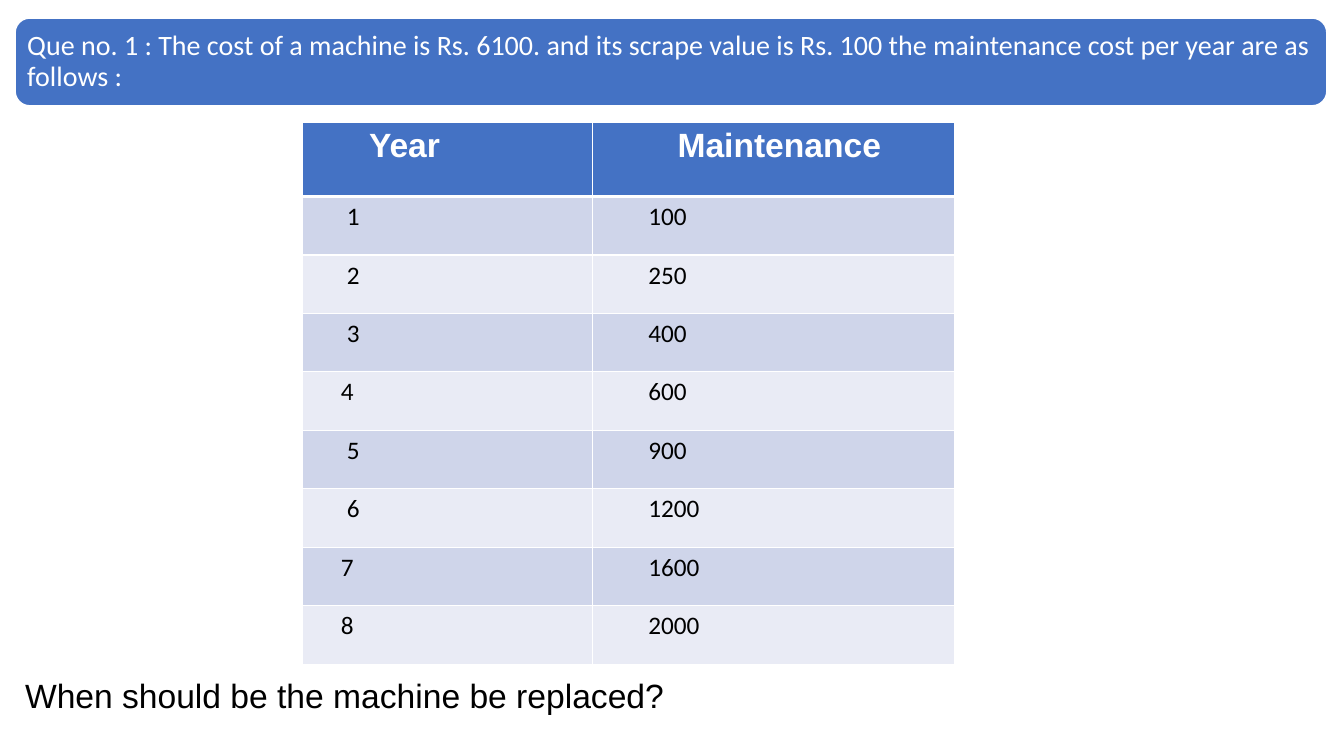
from dataclasses import dataclass

from pptx import Presentation
from pptx.dml.color import RGBColor
from pptx.enum.shapes import MSO_SHAPE
from pptx.enum.text import MSO_ANCHOR, MSO_AUTO_SIZE, PP_ALIGN
from pptx.oxml import parse_xml
from pptx.oxml.ns import nsdecls
from pptx.util import Inches, Pt


@dataclass(frozen=True)
class Theme:
    accent: str = "4472C4"
    dark_band: str = "CFD5EA"
    light_band: str = "E9EBF5"
    white: str = "FFFFFF"
    black: str = "000000"
    heading_font: str = "Arial"
    body_font: str = "Calibri"
    heading_size: int = 24
    banner_size: int = 20
    cell_size: int = 18


THEME = Theme()
MAINTENANCE_COSTS = [100, 250, 400, 600, 900, 1200, 1600, 2000]
OUTDENTED_YEARS = {4, 7, 8}


def color(value):
    return RGBColor.from_string(value)


def add_run(paragraph, text, font_name, size, font_color, bold=False):
    run = paragraph.add_run()
    run.text = text
    run.font.name = font_name
    run.font.size = Pt(size)
    run.font.bold = bold
    run.font.color.rgb = color(font_color)


def add_banner(slide, left, top, width, height):
    banner = slide.shapes.add_shape(
        MSO_SHAPE.ROUNDED_RECTANGLE, Inches(left), Inches(top), Inches(width), Inches(height)
    )
    banner.shadow.inherit = False
    banner.fill.solid()
    banner.fill.fore_color.rgb = color(THEME.accent)
    banner.line.color.rgb = color(THEME.white)
    banner.line.width = Pt(1)

    title = slide.shapes.title
    banner.element.addnext(title.element)
    inset = 0.04
    title.left, title.top = Inches(left + inset), Inches(top + inset)
    title.width, title.height = Inches(width - 2 * inset), Inches(height - 2 * inset)
    frame = title.text_frame
    frame.word_wrap = True
    frame.auto_size = MSO_AUTO_SIZE.NONE
    frame.vertical_anchor = MSO_ANCHOR.MIDDLE
    frame.margin_left = frame.margin_right = Inches(0.08)
    frame.margin_top = frame.margin_bottom = Inches(0.08)
    paragraph = frame.paragraphs[0]
    paragraph.alignment = PP_ALIGN.LEFT
    paragraph.line_spacing = 0.9
    add_run(
        paragraph,
        "Que no. 1 : The cost of a machine is Rs. 6100. and its scrape value is Rs. 100 "
        "the maintenance cost per year are as follows :",
        THEME.body_font, THEME.banner_size, THEME.white,
    )


def set_borders(cell, top_width, bottom_width):
    properties = cell._tc.get_or_add_tcPr()
    for side, width in (("L", 1), ("R", 1), ("T", top_width), ("B", bottom_width)):
        properties.append(parse_xml(
            f'<a:ln{side} {nsdecls("a")} w="{Pt(width)}"><a:solidFill>'
            f'<a:srgbClr val="{THEME.white}"/></a:solidFill></a:ln{side}>'
        ))


def fill_cell(cell, text, row, indent):
    header = row == 0
    set_borders(cell, 3 if row == 1 else 1, 3 if header else 1)
    cell.fill.solid()
    band = THEME.dark_band if row % 2 else THEME.light_band
    cell.fill.fore_color.rgb = color(THEME.accent if header else band)
    cell.margin_left = Inches(indent)
    add_run(
        cell.text_frame.paragraphs[0],
        text,
        THEME.heading_font if header else THEME.body_font,
        THEME.heading_size if header else THEME.cell_size,
        THEME.white if header else THEME.black,
        header,
    )


def add_cost_table(slide, left, top, width, height):
    row_count = len(MAINTENANCE_COSTS) + 1
    table = slide.shapes.add_table(
        row_count, 2, Inches(left), Inches(top), Inches(width), Inches(height)
    ).table
    year_width, header_height = 2.88, 0.74
    table.columns[0].width = Inches(year_width)
    table.columns[1].width = Inches(width - year_width)
    table.rows[0].height = Inches(header_height)
    for row in range(1, row_count):
        table.rows[row].height = Inches((height - header_height) / (row_count - 1))

    fill_cell(table.cell(0, 0), "Year", 0, 0.66)
    fill_cell(table.cell(0, 1), "Maintenance", 0, 0.84)
    for year, cost in enumerate(MAINTENANCE_COSTS, start=1):
        year_indent = 0.38 if year in OUTDENTED_YEARS else 0.44
        fill_cell(table.cell(year, 0), str(year), year, year_indent)
        fill_cell(table.cell(year, 1), str(cost), year, 0.55)


def add_question(slide, left, top, width, height):
    question = slide.shapes.add_textbox(
        Inches(left), Inches(top), Inches(width), Inches(height)
    )
    question.text_frame.word_wrap = True
    add_run(
        question.text_frame.paragraphs[0], "When should be the machine be replaced?",
        THEME.heading_font, THEME.heading_size, THEME.black,
    )


def main():
    presentation = Presentation()
    presentation.slide_width = Inches(13.33)
    presentation.slide_height = Inches(7.5)
    slide = presentation.slides.add_slide(presentation.slide_layouts[5])
    add_banner(slide, 0.15, 0.18, 13.01, 0.87)
    add_cost_table(slide, 3, 1.21, 6.47, 5.38)
    add_question(slide, 0.15, 6.65, 12.71, 0.5)
    presentation.save("out.pptx")


if __name__ == "__main__":
    main()
